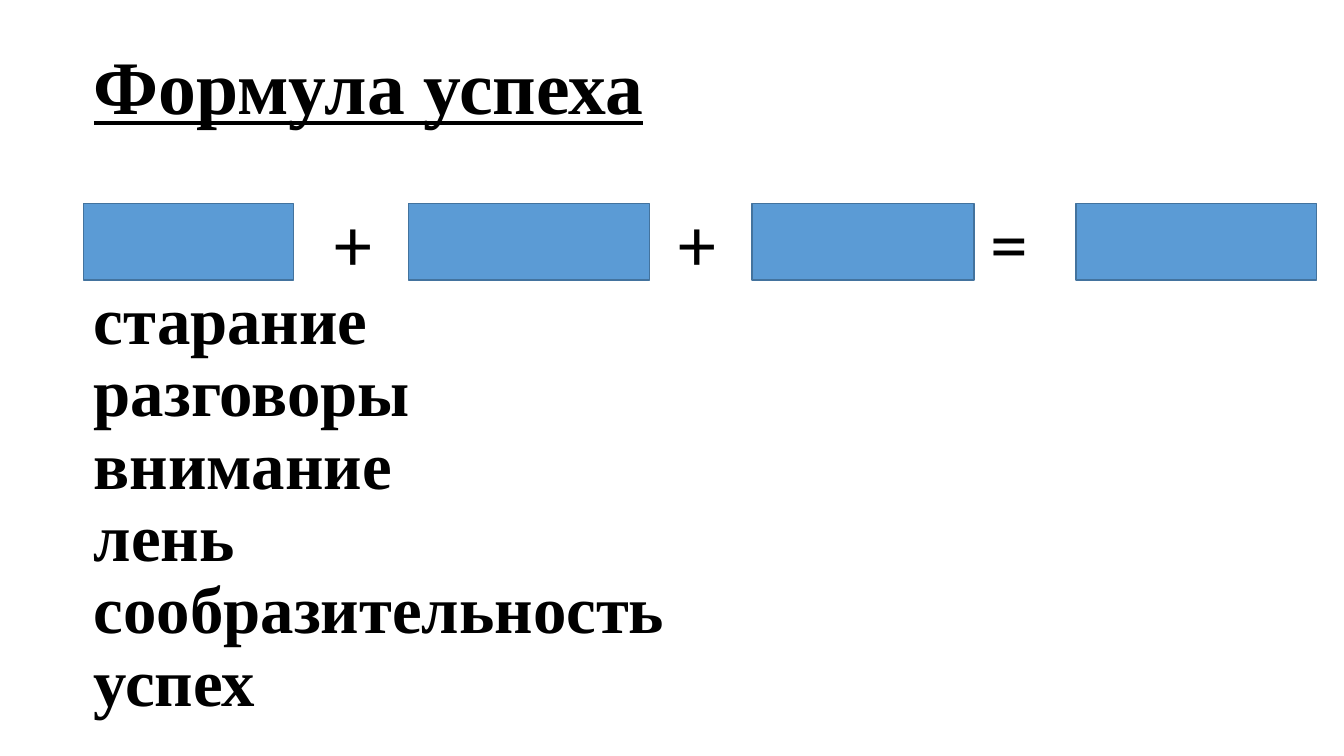
import pptx
import pptx.dml.color
import pptx.enum.shapes
import pptx.enum.text
import pptx.util
from pptx.util import Inches

# Content
TITLE = "Формула успеха"
WORDS = ["старание", "разговоры", "внимание", "лень", "сообразительность", "успех"]
BLANKS = [(0.83, 2.08), (4.05, 2.39), (7.46, 2.2), (10.67, 2.39)]  # left, width
OPERATORS = [("+", 3.5), ("+", 6.92), ("=", 10.01)]  # sign, centre

LEFT, CONTENT_W = 0.83, 12.23
BLANK_TOP, BLANK_H = 2.02, 0.76
SIGN_TOP, SIGN_W, SIGN_H = 1.94, 0.8, 0.92
ALIGN = pptx.enum.text.PP_ALIGN


def rgb(value):
    return pptx.dml.color.RGBColor.from_string(value)


def place(sp, left, top, width, height):
    sp.left, sp.top = Inches(left), Inches(top)
    sp.width, sp.height = Inches(width), Inches(height)


def write(sp, lines, size, font="Times New Roman", bold=True, underline=False,
          align=ALIGN.LEFT, spacing=None, margin=0.1):
    tf = sp.text_frame
    tf.word_wrap = True
    tf.auto_size = pptx.enum.text.MSO_AUTO_SIZE.NONE
    tf.vertical_anchor = pptx.enum.text.MSO_ANCHOR.TOP
    tf.margin_left = tf.margin_right = Inches(margin)
    tf.margin_top = tf.margin_bottom = Inches(margin / 2)
    for i, line in enumerate(lines):
        p = tf.paragraphs[0] if i == 0 else tf.add_paragraph()
        p.alignment = align
        p.space_before = pptx.util.Pt(0)
        if spacing:
            p.line_spacing = pptx.util.Pt(spacing)
        r = p.add_run()
        r.text = line
        r.font.name, r.font.size = font, pptx.util.Pt(size)
        r.font.bold, r.font.underline = bold, underline
        r.font.color.rgb = rgb("000000")


prs = pptx.Presentation()
prs.slide_width, prs.slide_height = Inches(13.33), Inches(7.5)
s = prs.slides.add_slide(prs.slide_layouts[1])

# Title
place(s.shapes.title, LEFT, 0.34, CONTENT_W, 1)
write(s.shapes.title, [TITLE], 54, underline=True)

# Word list, without bullets
body = s.placeholders[1]
place(body, LEFT, 2.78, CONTENT_W, 4.41)
write(body, WORDS, 47.7, spacing=51.7)
for p in body.text_frame.paragraphs:
    pPr = p._p.get_or_add_pPr()
    pPr.set("marL", "0")
    pPr.set("indent", "0")
    pPr.append(pptx.oxml.xmlchemy.OxmlElement("a:buNone"))

# Formula: blanks to fill in
for left, width in BLANKS:
    sp = s.shapes.add_shape(pptx.enum.shapes.MSO_SHAPE.RECTANGLE, Inches(left),
                            Inches(BLANK_TOP), Inches(width), Inches(BLANK_H))
    sp.shadow.inherit = False
    sp.fill.solid()
    sp.fill.fore_color.rgb = rgb("5B9BD5")
    sp.line.color.rgb = rgb("43739E")
    sp.line.width = pptx.util.Pt(1)

# Formula: signs between the blanks
for sign, centre in OPERATORS:
    sp = s.shapes.add_textbox(Inches(centre - SIGN_W / 2), Inches(SIGN_TOP),
                              Inches(SIGN_W), Inches(SIGN_H))
    write(sp, [sign], 54, font="Calibri", bold=False, align=ALIGN.CENTER, margin=0)

prs.save("out.pptx")
